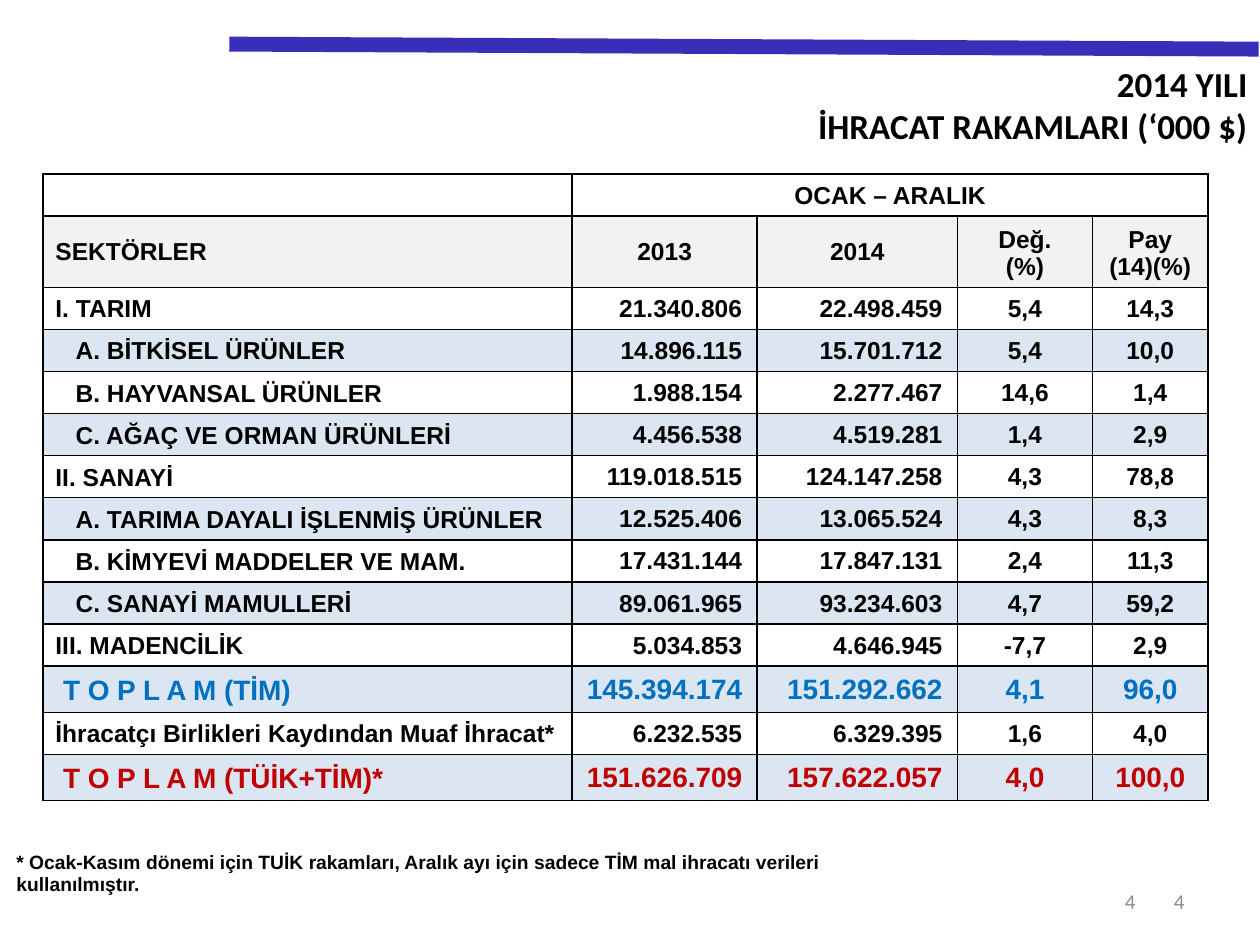
from lxml.etree import SubElement
from pptx import Presentation
from pptx.dml.color import RGBColor
from pptx.enum.shapes import MSO_CONNECTOR
from pptx.enum.text import MSO_ANCHOR, PP_ALIGN
from pptx.oxml.ns import qn
from pptx.util import Inches, Pt

BLACK = RGBColor(0x00, 0x00, 0x00)
GREY = RGBColor(0x8C, 0x8C, 0x8C)
INDIGO = RGBColor(0x38, 0x2E, 0xB8)
HEADER_GREY = RGBColor(0xF2, 0xF2, 0xF2)
PALE_BLUE = RGBColor(0xDC, 0xE6, 0xF2)
TOTAL_BLUE = RGBColor(0x00, 0x70, 0xC0)
TOTAL_RED = RGBColor(0xC0, 0x00, 0x00)

COLUMN_WIDTHS = (4.2, 1.47, 1.59, 1.07, 0.92)
HEADINGS = ("SEKTÖRLER", "2013", "2014", "Değ.\n(%)", "Pay\n(14)(%)")
SUBSECTOR_INDENT = 0.16
TOTAL_INDENT = 0.06
SECTORS = (
    ("I. TARIM", "21.340.806", "22.498.459", "5,4", "14,3"),
    ("A. BİTKİSEL ÜRÜNLER", "14.896.115", "15.701.712", "5,4", "10,0"),
    ("B. HAYVANSAL ÜRÜNLER", "1.988.154", "2.277.467", "14,6", "1,4"),
    ("C. AĞAÇ VE ORMAN ÜRÜNLERİ", "4.456.538", "4.519.281", "1,4", "2,9"),
    ("II. SANAYİ", "119.018.515", "124.147.258", "4,3", "78,8"),
    ("A. TARIMA DAYALI İŞLENMİŞ ÜRÜNLER", "12.525.406", "13.065.524", "4,3", "8,3"),
    ("B. KİMYEVİ MADDELER VE MAM.", "17.431.144", "17.847.131", "2,4", "11,3"),
    ("C. SANAYİ MAMULLERİ", "89.061.965", "93.234.603", "4,7", "59,2"),
    ("III. MADENCİLİK", "5.034.853", "4.646.945", "-7,7", "2,9"),
    ("T O P L A M (TİM)", "145.394.174", "151.292.662", "4,1", "96,0"),
    ("İhracatçı Birlikleri Kaydından Muaf İhracat*", "6.232.535", "6.329.395", "1,6", "4,0"),
    ("T O P L A M (TÜİK+TİM)*", "151.626.709", "157.622.057", "4,0", "100,0"),
)
TOTAL_COLORS = {"T O P L A M (TİM)": TOTAL_BLUE, "T O P L A M (TÜİK+TİM)*": TOTAL_RED}
FOOTNOTE = (
    "* Ocak-Kasım dönemi için TUİK rakamları, Aralık ayı için sadece TİM mal "
    "ihracatı verileri kullanılmıştır."
)


def write(frame, text, font_name, size, color, align, bold=True):
    """Fill a text frame and format all of its runs."""
    frame.text = text
    for paragraph in frame.paragraphs:
        paragraph.alignment = align
        for run in paragraph.runs:
            run.font.name = font_name
            run.font.size = Pt(size)
            run.font.bold = bold
            run.font.color.rgb = color


def set_margins(cell, left, top, right, bottom):
    """Set the four insets of a cell in inches."""
    cell.margin_left, cell.margin_top = Inches(left), Inches(top)
    cell.margin_right, cell.margin_bottom = Inches(right), Inches(bottom)


def style_cell(cell, fill):
    """Give a cell black borders and a fill, or no fill."""
    properties = cell._tc.get_or_add_tcPr()
    for side in ("a:lnL", "a:lnR", "a:lnT", "a:lnB"):
        border = SubElement(properties, qn(side), w=str(Pt(1)))
        solid = SubElement(border, qn("a:solidFill"))
        SubElement(solid, qn("a:srgbClr"), val=str(BLACK))
    if fill is None:
        cell.fill.background()
    else:
        cell.fill.solid()
        cell.fill.fore_color.rgb = fill


def add_plain_table(slide, rows, columns, left, top, width, height):
    """Add a table without header or banding and return its frame."""
    frame = slide.shapes.add_table(
        rows, columns, Inches(left), Inches(top), Inches(width), Inches(height)
    )
    frame.table.first_row = False
    frame.table.horz_banding = False
    return frame


def add_header_bar(slide, left, top, right, bottom):
    """Draw the thick line across the top of the slide."""
    bar = slide.shapes.add_connector(
        MSO_CONNECTOR.STRAIGHT, Inches(left), Inches(top), Inches(right), Inches(bottom)
    )
    bar.line.color.rgb = INDIGO
    bar.line.width = Pt(8.5)
    SubElement(bar._element.spPr, qn("a:effectLst"))


def add_title(slide, left, top, width, height):
    """Place the two-line title."""
    title = slide.shapes.add_textbox(Inches(left), Inches(top), Inches(width), Inches(height))
    title.text_frame.word_wrap = True
    write(title.text_frame, "2014 YILI\nİHRACAT RAKAMLARI (‘000 $)",
          "Calibri", 20, BLACK, PP_ALIGN.RIGHT)


def add_page_number(slide, left, top, width, height):
    """Place a right-aligned page number."""
    number = slide.shapes.add_textbox(Inches(left), Inches(top), Inches(width), Inches(height))
    number.text_frame.word_wrap = True
    number.text_frame.vertical_anchor = MSO_ANCHOR.MIDDLE
    write(number.text_frame, "4", "Calibri", 12, GREY, PP_ALIGN.RIGHT, bold=False)


def fill_sector_row(table, row, values):
    """Write one sector with its exports, change and share."""
    sector = values[0]
    color = TOTAL_COLORS.get(sector, BLACK)
    is_total = sector in TOTAL_COLORS
    is_subsector = sector[:2] in ("A.", "B.", "C.")
    indent = TOTAL_INDENT if is_total else SUBSECTOR_INDENT if is_subsector else 0
    for column, value in enumerate(values):
        cell = table.cell(row, column)
        style_cell(cell, PALE_BLUE if row % 2 else None)
        if column == 0:
            align = PP_ALIGN.LEFT
            cell.vertical_anchor = MSO_ANCHOR.BOTTOM
            cell.margin_left = Inches(0.1 + indent)
        else:
            is_export = column < 3
            align = PP_ALIGN.RIGHT if is_export else PP_ALIGN.CENTER
            cell.vertical_anchor = MSO_ANCHOR.MIDDLE
            set_margins(cell, 0.01, 0.01, 0.12 if is_export else 0.01, 0)
        write(cell.text_frame, value, "Arial", 16 if is_total else 14, color, align)
    table.rows[row].height = Inches(0.34 if is_total else 0.31)


def add_export_table(slide, left, top, width, height):
    """Build the table of exports by sector."""
    frame = add_plain_table(slide, len(SECTORS) + 2, len(HEADINGS), left, top, width, height)
    table = frame.table
    for column, column_width in zip(table.columns, COLUMN_WIDTHS):
        column.width = Inches(column_width)

    for column in range(len(HEADINGS)):
        style_cell(table.cell(0, column), None)
    set_margins(table.cell(0, 0), 0.1, 0, 0.1, 0)
    period = table.cell(0, 1)
    period.merge(table.cell(0, len(HEADINGS) - 1))
    period.vertical_anchor = MSO_ANCHOR.BOTTOM
    write(period.text_frame, "OCAK – ARALIK", "Arial", 14, BLACK, PP_ALIGN.CENTER)
    table.rows[0].height = Inches(0.31)

    for column, heading in enumerate(HEADINGS):
        cell = table.cell(1, column)
        style_cell(cell, HEADER_GREY)
        cell.vertical_anchor = MSO_ANCHOR.MIDDLE if column < 3 else MSO_ANCHOR.BOTTOM
        align = PP_ALIGN.CENTER if column else PP_ALIGN.LEFT
        write(cell.text_frame, heading, "Arial", 14, BLACK, align)
    table.rows[1].height = Inches(0.53)

    for row, values in enumerate(SECTORS, start=2):
        fill_sector_row(table, row, values)
    frame.height = Inches(height)


def add_footnote(slide, left, top, width, height):
    """Place the footnote in a one-cell table."""
    note = add_plain_table(slide, 1, 1, left, top, width, height).table.cell(0, 0)
    note.fill.background()
    note.vertical_anchor = MSO_ANCHOR.MIDDLE
    set_margins(note, 0.01, 0.01, 0.01, 0)
    write(note.text_frame, FOOTNOTE, "Arial", 11, BLACK, PP_ALIGN.LEFT)


def main():
    """Build and save the slide."""
    presentation = Presentation()
    presentation.slide_width = Inches(10)
    presentation.slide_height = Inches(7.5)
    slide = presentation.slides.add_slide(presentation.slide_layouts[6])
    add_page_number(slide, 7.17, 6.95, 2.33, 0.4)
    add_header_bar(slide, 1.82, 0.35, 9.99, 0.39)
    add_page_number(slide, 7.01, 6.95, 2.1, 0.4)
    add_title(slide, 1.06, 0.45, 8.94, 0.77)
    add_export_table(slide, 0.34, 1.38, 9.25, 4.97)
    add_footnote(slide, 0.12, 6.74, 7.4, 0.31)
    presentation.save("out.pptx")


if __name__ == "__main__":
    main()
